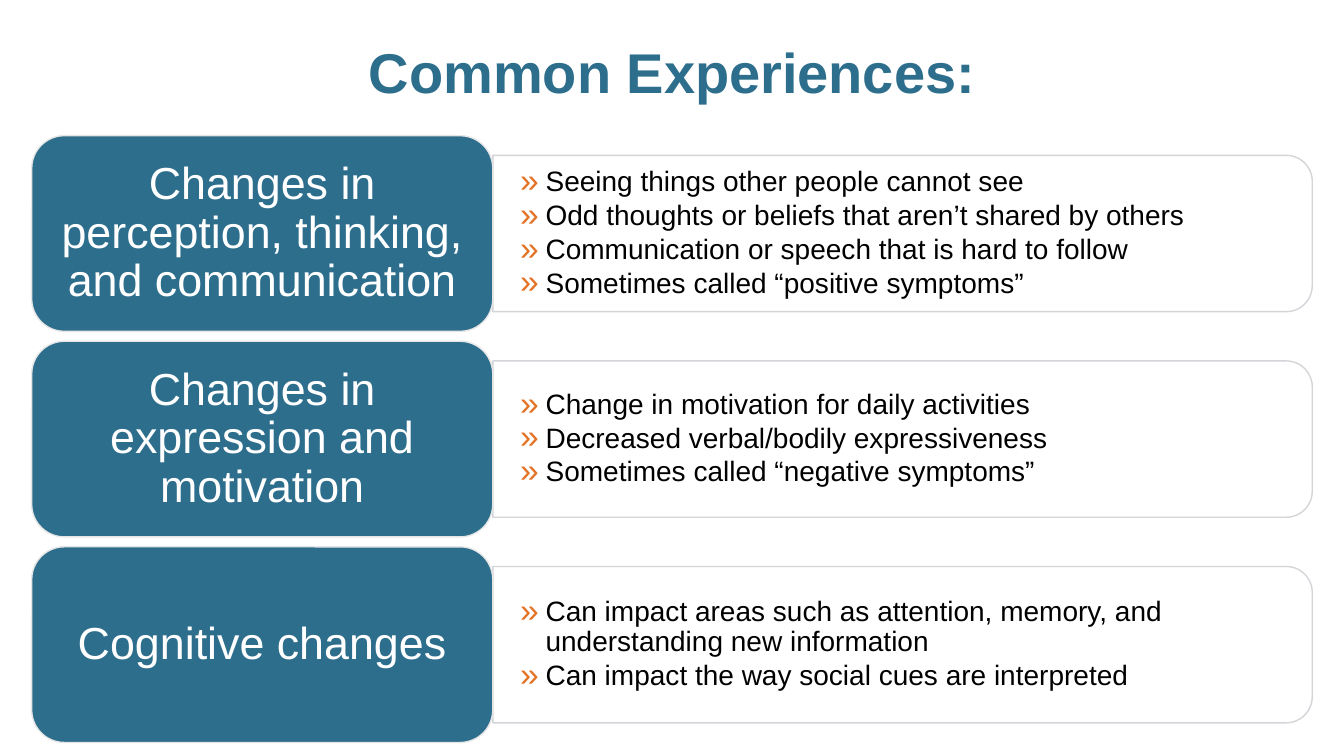
from lxml.etree import SubElement
from pptx import Presentation
from pptx.dml.color import RGBColor
from pptx.enum.shapes import MSO_SHAPE
from pptx.enum.text import MSO_ANCHOR, PP_ALIGN
from pptx.oxml.ns import qn
from pptx.util import Cm, Pt

TITLE = "Common Experiences:"
GROUPS = [
    ("Changes in perception, thinking, and communication", [
        "Seeing things other people cannot see",
        "Odd thoughts or beliefs that aren’t shared by others",
        "Communication or speech that is hard to follow",
        "Sometimes called “positive symptoms”",
    ]),
    ("Changes in expression and motivation", [
        "Change in motivation for daily activities",
        "Decreased verbal/bodily expressiveness",
        "Sometimes called “negative symptoms”",
    ]),
    ("Cognitive changes", [
        "Can impact areas such as attention, memory, and understanding new information",
        "Can impact the way social cues are interpreted",
    ]),
]

TEAL = RGBColor(0x2D, 0x6E, 0x8D)
ORANGE = RGBColor(0xE4, 0x72, 0x25)
WHITE = RGBColor(0xFF, 0xFF, 0xFF)
BLACK = RGBColor(0, 0, 0)
LABEL_EDGE = RGBColor(0xE7, 0xE6, 0xE6)
PANEL_EDGE = RGBColor(0xCF, 0xD1, 0xD4)

LEFT, TOP, PITCH = Cm(0.8), Cm(3.42), Cm(5.18)
LABEL_WIDTH, LABEL_HEIGHT = Cm(11.62), Cm(4.93)
PANEL_WIDTH, PANEL_HEIGHT = Cm(20.65), Cm(3.94)
LIST_WIDTH, LIST_HEIGHT = Cm(20.46), Cm(3.56)


def add_bullet(para):
    properties = para._p.get_or_add_pPr()
    properties.set("marL", str(Cm(0.64)))
    properties.set("indent", str(-Cm(0.64)))
    colour = SubElement(properties, qn("a:buClr"))
    SubElement(colour, qn("a:srgbClr"), val=str(ORANGE))
    SubElement(properties, qn("a:buSzPct"), val="120000")
    SubElement(properties, qn("a:buFont"), typeface="Arial")
    SubElement(properties, qn("a:buChar"), char="»")


def write(box, lines, size, color, bold=False, align=PP_ALIGN.CENTER,
          inset=(Cm(0.25), Cm(0.13)), bullet=False, after=Pt(0)):
    frame = box.text_frame
    frame.word_wrap = True
    frame.vertical_anchor = MSO_ANCHOR.MIDDLE
    frame.margin_left = frame.margin_right = inset[0]
    frame.margin_top = frame.margin_bottom = inset[1]
    for index, line in enumerate(lines):
        para = frame.add_paragraph() if index else frame.paragraphs[0]
        para.alignment = align
        para.line_spacing = 0.9
        para.space_after = after
        if bullet:
            add_bullet(para)
        span = para.add_run()
        span.text = line
        span.font.name = "Arial"
        span.font.size = Pt(size)
        span.font.bold = bold
        span.font.color.rgb = color


def add_block(page, kind, left, top, width, height, fill, edge):
    block = page.shapes.add_shape(kind, left, top, width, height)
    block.shadow.inherit = False
    block.fill.solid()
    block.fill.fore_color.rgb = fill
    block.line.color.rgb = edge
    block.line.width = Pt(1)
    return block


def add_panel(page, left, middle):
    center = left + PANEL_WIDTH // 2
    panel = add_block(page, MSO_SHAPE.ROUND_2_SAME_RECTANGLE,
                      center - PANEL_HEIGHT // 2, middle - PANEL_WIDTH // 2,
                      PANEL_HEIGHT, PANEL_WIDTH, WHITE, PANEL_EDGE)
    panel.rotation = 90
    edge = panel.line._ln.find(".//" + qn("a:srgbClr"))
    SubElement(edge, qn("a:alpha"), val="90000")


def main():
    deck = Presentation()
    deck.slide_width, deck.slide_height = Cm(33.87), Cm(19.05)
    page = deck.slides.add_slide(deck.slide_layouts[6])
    heading = page.shapes.add_textbox(Cm(2.33), Cm(0.38), Cm(29.21), Cm(3.02))
    write(heading, [TITLE], 40, TEAL, bold=True)

    panel_left = LEFT + LABEL_WIDTH
    for row, (name, points) in enumerate(GROUPS):
        top = TOP + row * PITCH
        middle = top + LABEL_HEIGHT // 2
        add_panel(page, panel_left, middle)
        details = page.shapes.add_textbox(
            panel_left, middle - LIST_HEIGHT // 2, LIST_WIDTH, LIST_HEIGHT)
        write(details, points, 20, BLACK, align=PP_ALIGN.LEFT,
              inset=(Cm(0.69), Cm(0.35)), bullet=True, after=Pt(2.5))
        label = add_block(page, MSO_SHAPE.ROUNDED_RECTANGLE, LEFT, top,
                          LABEL_WIDTH, LABEL_HEIGHT, TEAL, LABEL_EDGE)
        write(label, [name], 32, WHITE, inset=(Cm(0.33), Cm(0.43)))

    deck.save("out.pptx")


if __name__ == "__main__":
    main()
